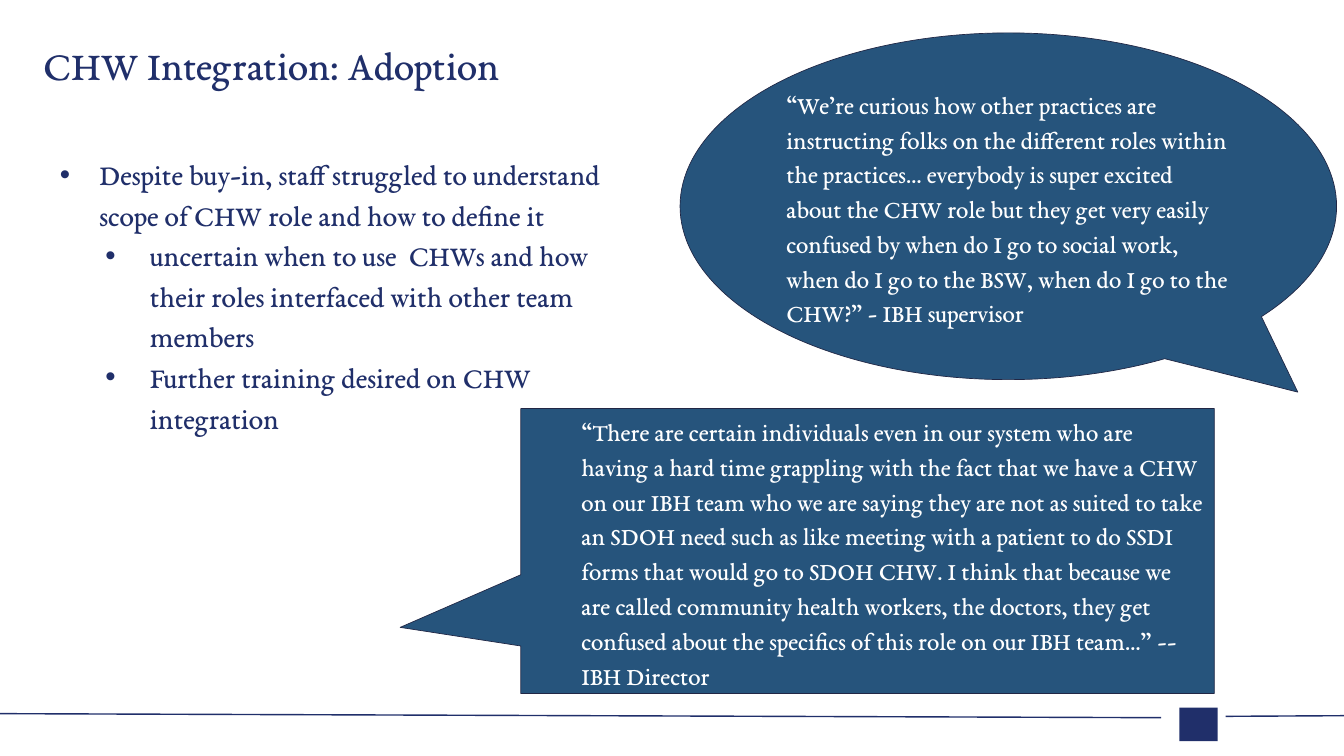
import pptx
import pptx.util
import pptx.dml.color
import pptx.enum.shapes
import pptx.enum.text
import pptx.oxml.ns
from lxml import etree
from pptx.util import Inches

NAVY = pptx.dml.color.RGBColor(0x20, 0x2F, 0x6A)
BLUE = pptx.dml.color.RGBColor(0x26, 0x54, 0x7C)
OUTLINE = pptx.dml.color.RGBColor(0x21, 0x27, 0x45)
WHITE = pptx.dml.color.RGBColor(0xFF, 0xFF, 0xFF)
FONT = "EB Garamond"
TOP = pptx.enum.text.MSO_ANCHOR.TOP
MIDDLE = pptx.enum.text.MSO_ANCHOR.MIDDLE


def write_text(shape, text, size, color, spacing, anchor, inset):
    """Fill a shape with text, one paragraph for each line of it."""
    text_frame = shape.text_frame
    text_frame.text = text
    text_frame.word_wrap = True
    text_frame.vertical_anchor = anchor
    text_frame.margin_left = text_frame.margin_right = Inches(inset[0])
    text_frame.margin_top = text_frame.margin_bottom = Inches(inset[1])
    for paragraph in text_frame.paragraphs:
        paragraph.alignment = pptx.enum.text.PP_ALIGN.LEFT
        paragraph.line_spacing = spacing
        for run in paragraph.runs:
            run.font.name = FONT
            run.font.size = pptx.util.Pt(size)
            run.font.color.rgb = color


def set_indent(paragraph, margin, first_line):
    """Set the left margin and first-line indent of a paragraph."""
    properties = paragraph._p.get_or_add_pPr()
    properties.set("marL", str(Inches(margin)))
    properties.set("indent", str(Inches(first_line)))
    return properties


presentation = pptx.Presentation()
presentation.slide_width = Inches(20)
presentation.slide_height = Inches(11.25)
slide = presentation.slides.add_slide(presentation.slide_layouts[6])
shapes = slide.shapes

# Footer: a plain block between two rules
block = shapes.add_shape(
    pptx.enum.shapes.MSO_SHAPE.RECTANGLE,
    Inches(17.55), Inches(10.53), Inches(0.57), Inches(0.5))
block.shadow.inherit = False
block.fill.solid()
block.fill.fore_color.rgb = NAVY
block.line.fill.background()

for start_x, start_y, end_x, end_y in [(17.28, 10.68, 0, 10.62), (20, 10.65, 18.24, 10.66)]:
    rule = shapes.add_connector(
        pptx.enum.shapes.MSO_CONNECTOR.STRAIGHT,
        Inches(start_x), Inches(start_y), Inches(end_x), Inches(end_y))
    rule.line.color.rgb = NAVY
    rule.line.width = pptx.util.Pt(1.5)
    etree.SubElement(rule._element.spPr, pptx.oxml.ns.qn("a:effectLst"))

# Title
title = shapes.add_textbox(Inches(0.5), Inches(-0.09), Inches(17.25), Inches(2.17))
write_text(title, "CHW Integration: Adoption", 44, NAVY, 0.9, MIDDLE, (0.15, 0.07))

# Bulleted findings: level, text
findings = [
    (0, "Despite buy-in, staff struggled to understand scope of CHW role and how to define it"),
    (1, "uncertain when to use  CHWs and how their roles interfaced with other team members"),
    (1, "Further training desired on CHW integration"),
]
indents = [(0.75, -0.59), (1.5, -0.66)]
body = shapes.add_textbox(Inches(0.58), Inches(2.18), Inches(8.9), Inches(5.91))
write_text(body, "\n".join(text for level, text in findings), 31.5, NAVY, 1.15, TOP, (0.15, 0.07))
for paragraph, (level, text) in zip(body.text_frame.paragraphs, findings):
    paragraph.level = level
    properties = set_indent(paragraph, *indents[level])
    bullet_color = etree.SubElement(properties, pptx.oxml.ns.qn("a:buClr"))
    etree.SubElement(bullet_color, pptx.oxml.ns.qn("a:srgbClr"), val=str(NAVY))
    etree.SubElement(properties, pptx.oxml.ns.qn("a:buFont"), typeface="Arial")
    etree.SubElement(properties, pptx.oxml.ns.qn("a:buChar"), char="•")

# Quote callouts: preset, box, adjustments, left margin of the text, quote
quotes = [
    (pptx.enum.shapes.MSO_SHAPE.OVAL_CALLOUT, (10.12, 0.49, 9.77, 5.16), (0.441, 0.536), 0,
     "“We’re curious how other practices are instructing folks on the different roles "
     "within the practices… everybody is super excited about the CHW role but they get "
     "very easily confused by when do I go to social work, when do I go to the BSW, "
     "when do I go to the CHW?” - IBH supervisor"),
    (pptx.enum.shapes.MSO_SHAPE.ROUNDED_RECTANGULAR_CALLOUT, (7.75, 6.08, 10.32, 4.24),
     (-0.674, 0.268, 0), 0.75,
     "“There are certain individuals even in our system who are having a hard time "
     "grappling with the fact that we have a CHW on our IBH team who we are saying they "
     "are not as suited to take an SDOH need such as like meeting with a patient to do "
     "SSDI forms that would go to SDOH CHW. I think that because we are called community "
     "health workers, the doctors, they get confused about the specifics of this role on "
     "our IBH team…” -- IBH Director"),
]
for preset, box, adjustments, margin, quote in quotes:
    callout = shapes.add_shape(preset, *[Inches(length) for length in box])
    for index, value in enumerate(adjustments):
        callout.adjustments[index] = value
    callout.shadow.inherit = False
    callout.fill.solid()
    callout.fill.fore_color.rgb = BLUE
    callout.line.color.rgb = OUTLINE
    callout.line.width = pptx.util.Pt(0.75)
    write_text(callout, quote, 27, WHITE, 1.15, MIDDLE, (0.15, 0.15))
    set_indent(callout.text_frame.paragraphs[0], margin, 0)

presentation.save("out.pptx")
